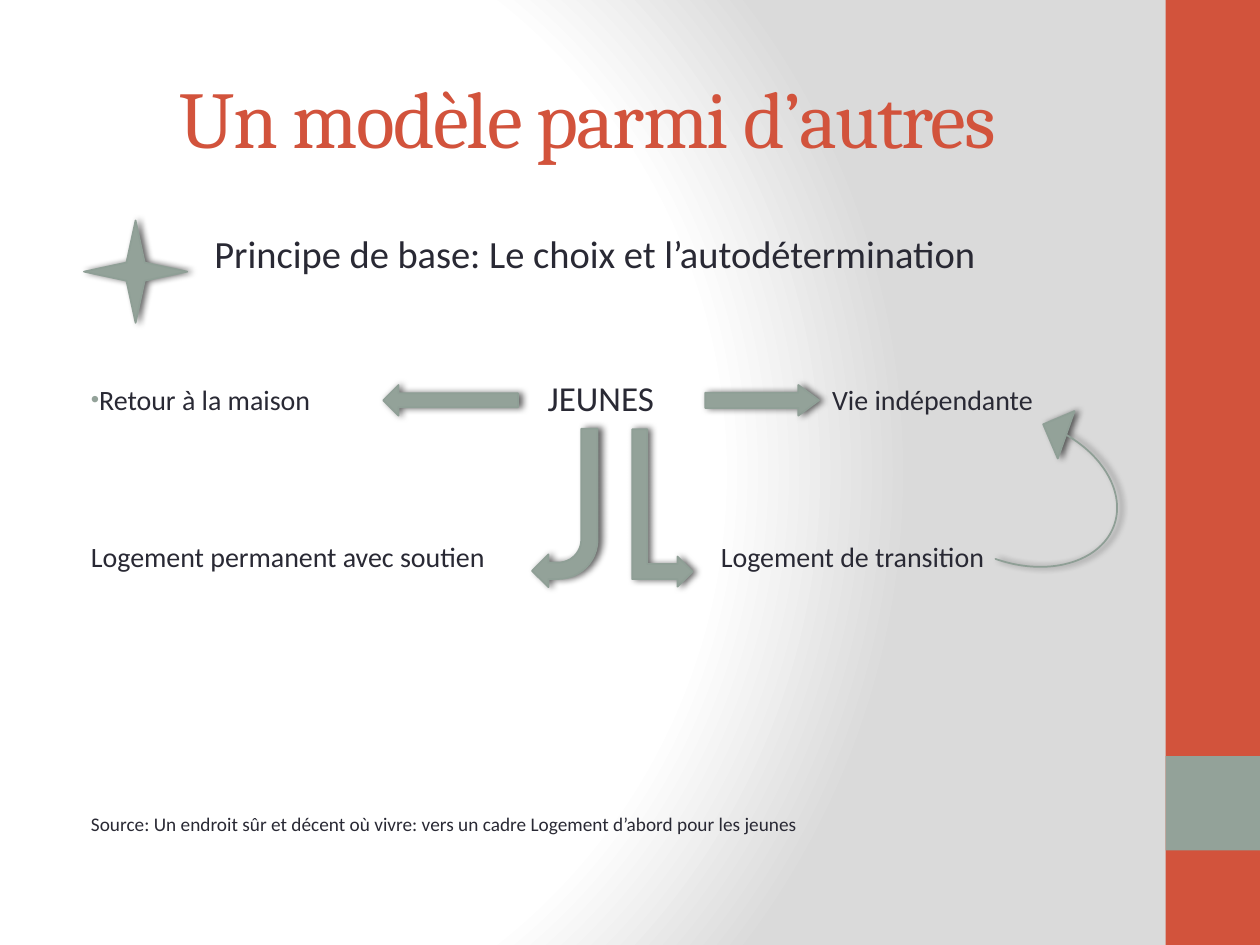
import pptx
import pptx.dml.color
import pptx.enum.shapes
import pptx.enum.text
import pptx.oxml
import pptx.oxml.ns
import pptx.util

Pt = pptx.util.Pt
RGBColor = pptx.dml.color.RGBColor
Shape = pptx.enum.shapes.MSO_SHAPE
Align = pptx.enum.text.PP_ALIGN
Anchor = pptx.enum.text.MSO_ANCHOR

RED = RGBColor(0xD2, 0x53, 0x3C)
SAGE = RGBColor(0x93, 0xA2, 0x99)
SAGE_EDGE = RGBColor(0x8F, 0x9F, 0x96)
INK = RGBColor(0x29, 0x29, 0x34)

NAMESPACE = pptx.oxml.ns.nsdecls("a")
GRADIENT = f"""<a:gradFill {NAMESPACE} rotWithShape="1"><a:gsLst>
<a:gs pos="0"><a:srgbClr val="FFFFFF"/></a:gs>
<a:gs pos="75000"><a:srgbClr val="FFFFFF"/></a:gs>
<a:gs pos="100000"><a:srgbClr val="DADADA"/></a:gs></a:gsLst>
<a:path path="circle"><a:fillToRect l="20000" t="50000" r="100000" b="50000"/></a:path>
</a:gradFill>"""
SHADOW = f"""<a:outerShdw {NAMESPACE} blurRad="{Pt(4)}" dist="{Pt(2)}" dir="0" rotWithShape="0">
<a:srgbClr val="000000"><a:alpha val="60000"/></a:srgbClr></a:outerShdw>"""
BULLET = (
    f'<a:buClr {NAMESPACE}><a:srgbClr val="{SAGE}"/></a:buClr>',
    f'<a:buSzPct {NAMESPACE} val="85000"/>',
    f'<a:buFont {NAMESPACE} typeface="Arial"/>',
    f'<a:buChar {NAMESPACE} char="•"/>',
)


def write(frame, text, font="Calibri", size=16, color=INK, align=Align.LEFT,
          spacing=0, bullet=False):
    frame.word_wrap = True
    frame.vertical_anchor = Anchor.MIDDLE
    para = frame.paragraphs[0]
    para.alignment = align
    span = para.add_run()
    span.text = text
    span.font.name = font
    span.font.size = Pt(size)
    span.font.color.rgb = color
    if spacing:
        span.font._element.set("spc", str(spacing * 100))
    if bullet:
        properties = para._p.get_or_add_pPr()
        properties.set("marL", "0")
        properties.set("indent", "0")
        for xml in BULLET:
            properties.append(pptx.oxml.parse_xml(xml))


class Slide:
    text_height = 36

    def __init__(self, page):
        self.page = page

    def background(self):
        self.page.background.fill.solid()
        solid = self.page.element.find(".//" + pptx.oxml.ns.qn("a:solidFill"))
        solid.getparent().replace(solid, pptx.oxml.parse_xml(GRADIENT))

    def title(self, text, left, top, width, height):
        box = self.page.shapes.title
        box.left, box.top, box.width, box.height = map(Pt, (left, top, width, height))
        write(box.text_frame, text, font="Cambria", size=46, color=RED,
              align=Align.CENTER, spacing=-1)

    def label(self, text, left, middle, width, **style):
        box = self.page.shapes.add_textbox(
            Pt(left), Pt(middle - self.text_height / 2), Pt(width), Pt(self.text_height))
        frame = box.text_frame
        frame.margin_left = frame.margin_right = 0
        write(frame, text, **style)

    def band(self, top, height, color):
        box = self.page.shapes.add_shape(
            Shape.RECTANGLE, Pt(666), Pt(top), Pt(54), Pt(height))
        box.shadow.inherit = False
        box.fill.solid()
        box.fill.fore_color.rgb = color
        box.line.fill.background()

    def symbol(self, kind, left, top, width, height, rotation=0, adjustments=()):
        shape = self.page.shapes.add_shape(kind, *map(Pt, (left, top, width, height)))
        shape.rotation = rotation
        for index, value in enumerate(adjustments):
            shape.adjustments[index] = value
        shape.fill.solid()
        shape.fill.fore_color.rgb = SAGE
        shape.line.color.rgb = SAGE_EDGE
        shape.line.width = Pt(1)
        shape.shadow.inherit = False
        effects = shape._element.spPr.find(pptx.oxml.ns.qn("a:effectLst"))
        effects.append(pptx.oxml.parse_xml(SHADOW))


def main():
    deck = pptx.Presentation()
    deck.slide_width, deck.slide_height = Pt(720), Pt(540)
    slide = Slide(deck.slides.add_slide(deck.slide_layouts[5]))

    slide.background()
    slide.band(0, 540, RED)
    slide.band(432, 54, SAGE)
    slide.title("Un modèle parmi d’autres", 36, 21.6, 600, 90)

    left, upper, lower = 52, 228, 318
    slide.label("Principe de base: Le choix et l’autodétermination", left, 144.5, 576,
                size=22, align=Align.CENTER)
    slide.label("Retour à la maison", left, upper, 160, bullet=True)
    slide.label("JEUNES", 313, upper - 1, 80, size=20)
    slide.label("Vie indépendante", 475.5, upper, 150)
    slide.label("Logement permanent avec soutien", left, lower, 245)
    slide.label("Logement de transition", 412, lower, 180)
    slide.label("Source: Un endroit sûr et décent où vivre: vers un cadre "
                "Logement d’abord pour les jeunes", left, 471, 576, size=11)

    slide.symbol(Shape.RIGHT_ARROW, 403, 220, 65, 17.5, adjustments=(0.5, 0.675))
    slide.symbol(Shape.LEFT_ARROW, 219, 220, 77, 17.5, adjustments=(0.456, 0.5))
    slide.symbol(Shape.BENT_ARROW, 304, 245, 37.5, 90.5, 180, (0.25, 0.25, 0.25, 0.6))
    slide.symbol(Shape.BENT_UP_ARROW, 333.5, 273, 90, 34.5, 90)
    slide.symbol(Shape.CURVED_UP_ARROW, 564, 255, 96, 57.5, 289.5, (0, 0.5, 0.25))
    slide.symbol(Shape.STAR_4_POINT, 48, 126, 59, 58.5)

    deck.save("out.pptx")


if __name__ == "__main__":
    main()
